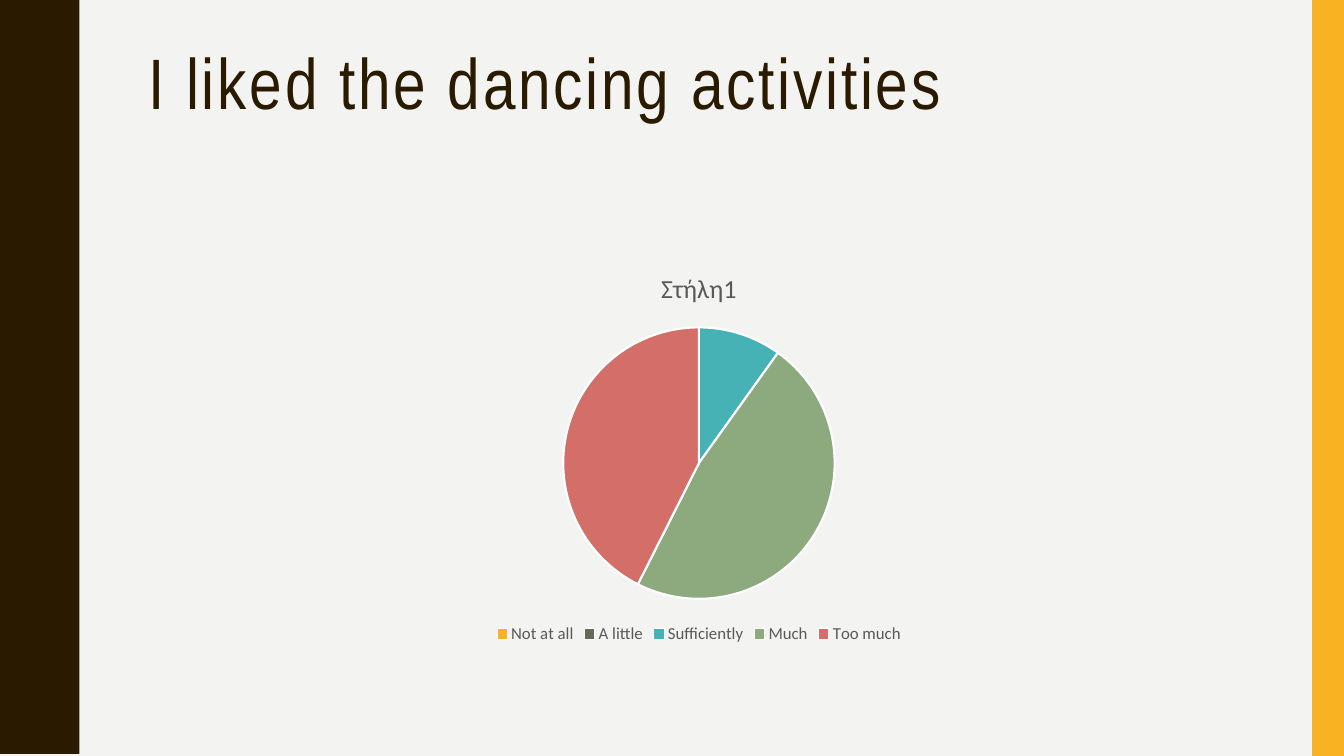
import pptx
import pptx.util
import pptx.dml.color
import pptx.chart.data
import pptx.enum.chart
import pptx.enum.text

Cm = pptx.util.Cm
Pt = pptx.util.Pt
RGBColor = pptx.dml.color.RGBColor

BACKGROUND = RGBColor(0xF3, 0xF3, 0xF2)
BROWN = RGBColor(0x2A, 0x1A, 0x00)
YELLOW = RGBColor(0xF8, 0xB3, 0x23)
OLIVE = RGBColor(0x65, 0x6A, 0x59)
TEAL = RGBColor(0x46, 0xB2, 0xB5)
GREEN = RGBColor(0x8C, 0xAA, 0x7E)
RED = RGBColor(0xD3, 0x6F, 0x68)
GREY = RGBColor(0x59, 0x59, 0x59)
BLACK = RGBColor(0x00, 0x00, 0x00)
WHITE = RGBColor(0xFF, 0xFF, 0xFF)

SLIDE_WIDTH, SLIDE_HEIGHT = 33.87, 19.05
WAVE_COUNT = 5
WAVE_DEPTH = 0.48
HALF_WAVE = [(0, 0), (0, 0.18), (0.03, 0.36), (0.05, 0.51), (0.08, 0.64),
             (0.13, 0.74), (0.18, 0.84), (0.23, 0.97), (0.28, 1.07),
             (0.33, 1.17), (0.38, 1.27), (0.43, 1.4), (0.46, 1.55),
             (0.48, 1.73), (0.48, 1.9)]

QUESTION = "I liked the dancing activities"
SERIES_NAME = "Στήλη1"
ANSWERS = [("Not at all", 0, YELLOW), ("A little", 0, OLIVE),
           ("Sufficiently", 10, TEAL), ("Much", 48, GREEN),
           ("Too much", 43, RED)]


def style_font(font, size, color, name="Calibri"):
    """Set the look of a font, without bold."""
    font.size, font.name, font.bold = Pt(size), name, False
    font.color.rgb = color


def write_text(frame, text, spacing=None, line_spacing=None, align=None, **style):
    """Write one formatted paragraph into a text frame."""
    paragraph = frame.paragraphs[0]
    paragraph.alignment = align
    paragraph.line_spacing = line_spacing
    run = paragraph.add_run()
    run.text = text
    style_font(run.font, **style)
    if spacing is not None:
        run.font._element.set("spc", str(round(spacing * 100)))


def paint(shape, color):
    """Fill a shape flatly, with no line or shadow."""
    shape.shadow.inherit = False
    shape.fill.solid()
    shape.fill.fore_color.rgb = color
    shape.line.fill.background()


def add_wavy_edge(slide, left, top, width, height):
    """Draw the brown band whose right side is a row of equal waves."""
    period = height / WAVE_COUNT
    trough = left + width - WAVE_DEPTH
    wave = HALF_WAVE + [(dx, period - dy) for dx, dy in reversed(HALF_WAVE)]
    edge = [(trough + dx, top + index * period + dy)
            for index in range(WAVE_COUNT) for dx, dy in wave]
    builder = slide.shapes.build_freeform(left, top, scale=Cm(1))
    builder.add_line_segments(edge + [(left, top + height)], close=True)
    paint(builder.convert_to_shape(), BROWN)


def add_side_bar(slide, left, top, width, height):
    """Draw the yellow bar along the right edge."""
    bar = slide.shapes.add_shape(pptx.enum.shapes.MSO_SHAPE.RECTANGLE,
                                 Cm(left), Cm(top), Cm(width), Cm(height))
    paint(bar, YELLOW)


def place_title(slide, left, top, width, height):
    """Place the question in the title placeholder."""
    title = slide.shapes.title
    title.left, title.top = Cm(left), Cm(top)
    title.width, title.height = Cm(width), Cm(height)
    frame = title.text_frame
    frame.word_wrap = True
    frame.auto_size = pptx.enum.text.MSO_AUTO_SIZE.NONE
    frame.vertical_anchor = pptx.enum.text.MSO_ANCHOR.TOP
    write_text(frame, QUESTION, size=51, color=BROWN, name="Arial Narrow",
               spacing=2, line_spacing=0.9, align=pptx.enum.text.PP_ALIGN.LEFT)


def add_answer_pie(slide, left, top, width, height):
    """Draw the pie of answers with its title and legend."""
    answers = pptx.chart.data.CategoryChartData()
    answers.categories = [label for label, _, _ in ANSWERS]
    answers.add_series(SERIES_NAME, [value for _, value, _ in ANSWERS])
    pie = slide.shapes.add_chart(pptx.enum.chart.XL_CHART_TYPE.PIE, Cm(left), Cm(top),
                                 Cm(width), Cm(height), answers).chart
    style_font(pie.font, 10, BLACK)
    pie.has_title = True
    write_text(pie.chart_title.text_frame, SERIES_NAME, size=18.6, color=GREY)
    pie.chart_title.include_in_layout = False
    pie.has_legend = True
    pie.legend.position = pptx.enum.chart.XL_LEGEND_POSITION.BOTTOM
    pie.legend.include_in_layout = False
    style_font(pie.legend.font, 12, GREY)
    plot = pie.plots[0]
    plot.vary_by_categories = True
    for index, (_, _, color) in enumerate(ANSWERS):
        piece = plot.series[0].points[index].format
        piece.fill.solid()
        piece.fill.fore_color.rgb = color
        piece.line.color.rgb = WHITE
        piece.line.width = Pt(1.5)


def main():
    """Build the slide and save it."""
    deck = pptx.Presentation()
    deck.slide_width, deck.slide_height = Cm(SLIDE_WIDTH), Cm(SLIDE_HEIGHT)
    slide = deck.slides.add_slide(deck.slide_layouts.get_by_name("Title Only"))
    slide.background.fill.solid()
    slide.background.fill.fore_color.rgb = BACKGROUND
    add_wavy_edge(slide, 0, 0, 2.46, SLIDE_HEIGHT)
    add_side_bar(slide, SLIDE_WIDTH - 0.8, 0, 0.8, SLIDE_HEIGHT)
    place_title(slide, 3.48, 1.07, 28.27, 4.14)
    add_answer_pie(slide, 3.48, 6.35, 28.27, 9.98)
    deck.save("out.pptx")


if __name__ == "__main__":
    main()
